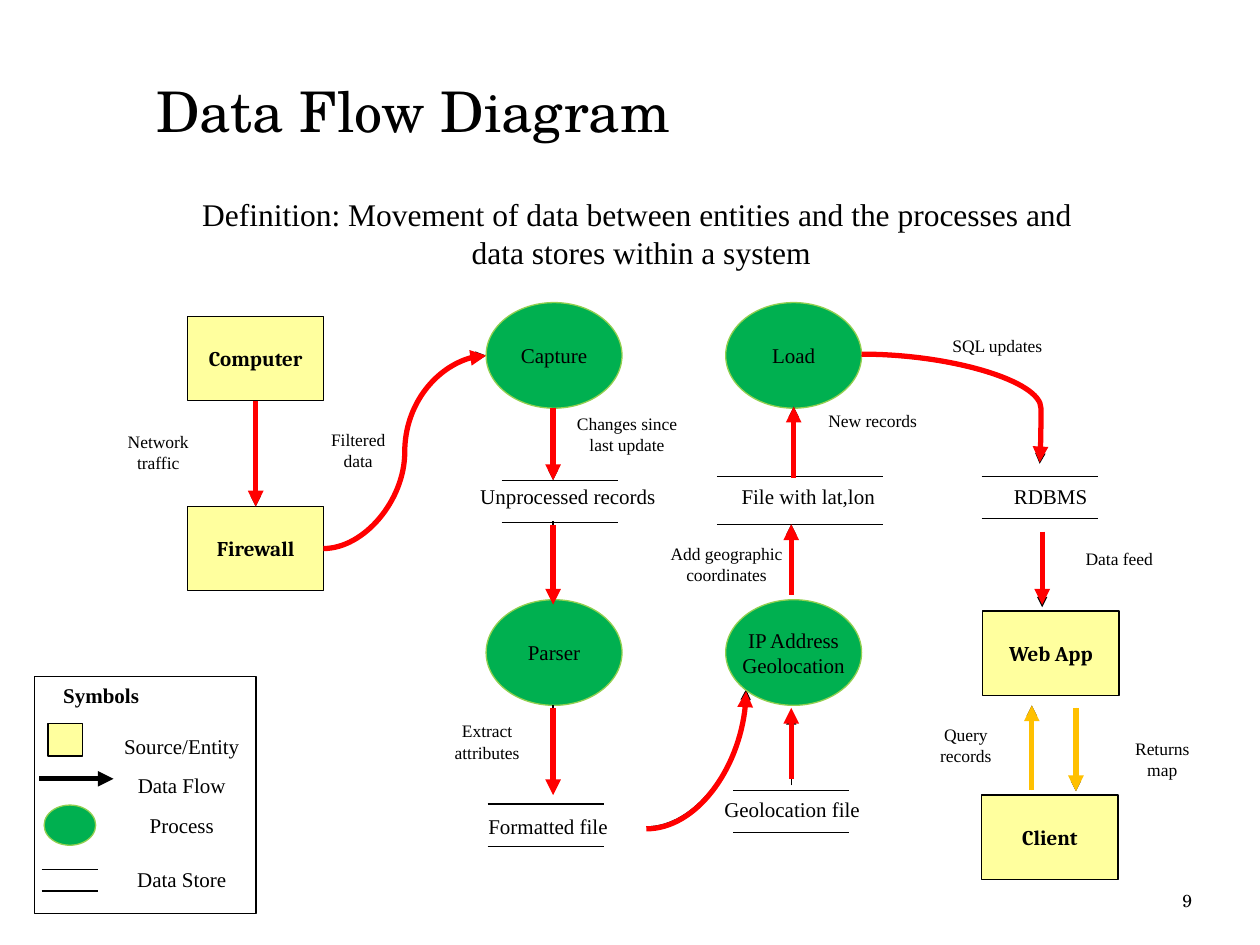
from lxml import etree
from pptx import Presentation
from pptx.dml.color import RGBColor
from pptx.enum.shapes import MSO_CONNECTOR as CONN, MSO_SHAPE as SHAPE
from pptx.enum.text import MSO_ANCHOR as ANCHOR, PP_ALIGN as ALIGN
from pptx.oxml.ns import qn
from pptx.util import Cm, Pt

COLORS = {
    "text": "000000", "line": "000000", "entity": "FFFF9E", "process": "00B050",
    "rim": "92D050", "flow": "FF0000", "query": "FFC000",
}
TIMES, SERIF, HEADING = "Times New Roman", "Cambria", "TeX Gyre Schola"
ENTITY_W, ENTITY_H = 2.75, 1.7
PROCESS_W, PROCESS_H = 2.74, 2.13


def rgb(name):
    return RGBColor.from_string(COLORS[name])


# Basic parts
def set_text(sp, text, size, font=TIMES, bold=False, align=ALIGN.CENTER,
             anchor=ANCHOR.TOP, wrap=True):
    tf = sp.text_frame
    tf.text = text
    tf.word_wrap = wrap
    tf.vertical_anchor = anchor
    for p in tf.paragraphs:
        p.alignment = align
        p.font.size = Pt(size)
        p.font.name = font
        p.font.bold = bold
        p.font.color.rgb = rgb("text")


def add_label(shapes, x, y, w, h, text, size=10, **style):
    sp = shapes.add_textbox(Cm(x), Cm(y), Cm(w), Cm(h))
    set_text(sp, text, size, **style)


def add_box(shapes, kind, x, y, w, h, fill=None, line="line"):
    sp = shapes.add_shape(kind, Cm(x), Cm(y), Cm(w), Cm(h))
    sp.shadow.inherit = False
    if fill:
        sp.fill.solid()
        sp.fill.fore_color.rgb = rgb(fill)
    else:
        sp.fill.background()
    sp.line.color.rgb = rgb(line)
    sp.line.width = Pt(0.75)
    return sp


def add_entity(shapes, x, y, text):
    sp = add_box(shapes, SHAPE.RECTANGLE, x, y, ENTITY_W, ENTITY_H, "entity")
    set_text(sp, text, 12, SERIF, True, anchor=ANCHOR.MIDDLE, wrap=False)
    return sp


def add_process(shapes, x, y, text):
    sp = add_box(shapes, SHAPE.OVAL, x, y, PROCESS_W, PROCESS_H, "process", "rim")
    set_text(sp, text, 12, anchor=ANCHOR.MIDDLE, wrap=False)


def add_line(shapes, x1, y1, x2, y2, color="line", width=0.75, arrow=False,
             curve=None, adj=None):
    kind = CONN.CURVE if curve else CONN.STRAIGHT
    c = shapes.add_connector(kind, Cm(x1), Cm(y1), Cm(x2), Cm(y2))
    c.line.color.rgb = rgb(color)
    c.line.width = Pt(width)
    spPr = c._element.spPr
    if arrow:
        etree.SubElement(spPr.find(qn("a:ln")), qn("a:tailEnd"), type="triangle")
    etree.SubElement(spPr, qn("a:effectLst"))
    if curve:
        geom = spPr.find(qn("a:prstGeom"))
        geom.set("prst", curve)
        if adj:
            guides = geom.get_or_add_avLst()
            etree.SubElement(guides, qn("a:gd"), name="adj1", fmla=f"val {adj}")
    return c


def add_flow(shapes, x1, y1, x2, y2, color="flow", shift=0, **curve):
    """A thick arrow over a thin black one, which is moved down by shift."""
    under = add_line(shapes, x1, y1 + shift, x2, y2 + shift, arrow=True, **curve)
    over = add_line(shapes, x1, y1, x2, y2, color, 3, True, **curve)
    return under, over


def add_rails(shapes, x, y, w, gap):
    for rail_y in (y, y + gap):
        add_line(shapes, x, rail_y, x + w, rail_y)


def add_store(shapes, x, y, text, text_x, text_y, text_w, w=2.34, gap=0.85):
    """Two rails and a name, the name placed relative to the upper rail."""
    group = shapes.add_group_shape().shapes
    add_rails(group, x, y, w, gap)
    add_label(group, x + text_x, y + text_y, text_w, 0.76, text, 12)


# Regions
def draw_network(shapes, x, y):
    computer = add_entity(shapes, x + 1.72, y, "Computer")
    firewall = add_entity(shapes, x + 1.72, y + 3.83, "Firewall")
    mid = x + 1.72 + ENTITY_W / 2
    for c in add_flow(shapes, mid, y + ENTITY_H, mid, y + 3.83):
        c.begin_connect(computer, 2)
        c.end_connect(firewall, 0)
    add_flow(shapes, x + 4.46, y + 4.68, x + 7.74, y + 0.79,
             curve="curvedConnector3", adj=50000)
    add_label(shapes, x, y + 2.18, 2.26, 1.12, "Network traffic")
    add_label(shapes, x + 3.71, y + 2.15, 2.9, 1.12, "Filtered\ndata")


def draw_capture(shapes, x, y):
    add_process(shapes, x + 1.34, y, "Capture")
    add_process(shapes, x + 1.34, y + 5.99, "Parser")
    add_store(shapes, x + 1.65, y + 3.58, "Unprocessed records", -0.92, -0.05, 4.52)
    add_store(shapes, x + 1.37, y + 10.11, "Formatted file", -0.76, 0.07, 3.96)
    for top, bottom, shift in ((2.13, 3.58, 0), (4.49, 6.09, -0.08), (8.17, 9.93, -0.05)):
        add_flow(shapes, x + 2.69, y + top, x + 2.69, y + bottom, shift=shift)
    add_flow(shapes, x + 4.57, y + 10.61, x + 6.58, y + 7.84, shift=-0.04,
             curve="curvedConnector2")
    add_label(shapes, x + 2.82, y + 2.1, 2.72, 1.12, "Changes since last update")
    add_label(shapes, x, y + 8.3, 2.72, 1.12, "Extract\vattributes")


def draw_load(shapes, x, y):
    add_process(shapes, x + 1.47, y, "Load")
    add_process(shapes, x + 1.47, y + 5.99, "IP Address\vGeolocation")
    add_store(shapes, x + 1.29, y + 3.5, "File with lat,lon", -0.3, 0.03, 4.29, 3.35, 0.97)
    add_store(shapes, x + 1.62, y + 9.83, "Geolocation file", -0.51, 0, 3.4)
    for dx, bottom, top, shift in ((2.84, 3.53, 2.1, 0), (2.79, 5.89, 4.47, 0),
                                   (2.79, 9.6, 8.17, 0.13)):
        add_flow(shapes, x + dx, y + bottom, x + dx, y + top, shift=shift)
    add_flow(shapes, x + 4.21, y + 1.04, x + 7.8, y + 3.22, shift=0.03,
             curve="curvedConnector3", adj=100700)
    add_label(shapes, x + 3.07, y + 2.05, 2.72, 0.69, "New records")
    add_label(shapes, x, y + 4.72, 2.97, 1.12, "Add geographic\ncoordinates")
    add_label(shapes, x + 5.46, y + 0.53, 2.97, 0.69, "SQL updates")


def draw_web(shapes, x, y):
    add_store(shapes, x + 1.68, y, "RDBMS", -0.31, 0.03, 3.4)
    add_entity(shapes, x + 1.7, y + 2.72, "Web App")
    add_entity(shapes, x + 1.68, y + 6.43, "Client")
    add_flow(shapes, x + 2.9, y + 1.12, x + 2.9, y + 2.59, shift=0.05)
    add_flow(shapes, x + 2.69, y + 6.33, x + 2.69, y + 4.62, "query")
    add_flow(shapes, x + 3.58, y + 4.67, x + 3.58, y + 6.35, "query")
    add_label(shapes, x + 2.97, y + 1.32, 2.97, 0.69, "Data feed")
    add_label(shapes, x, y + 4.88, 2.72, 1.12, "Query\nrecords")
    add_label(shapes, x + 3.96, y + 5.16, 2.72, 1.12, "Returns\nmap")


def draw_legend(shapes, x, y, w, h):
    add_box(shapes, SHAPE.RECTANGLE, x, y, w, h)
    add_label(shapes, x + 0.17, y, 2.36, 0.76, "Symbols", 12, bold=True)
    add_box(shapes, SHAPE.RECTANGLE, x + 0.28, y + 0.94, 0.69, 0.66, "entity")
    add_line(shapes, x + 0.1, y + 2.06, x + 1.6, y + 2.06, width=3, arrow=True)
    add_box(shapes, SHAPE.OVAL, x + 0.2, y + 2.59, 1.04, 0.81, "process", "rim")
    add_rails(shapes.add_group_shape().shapes, x + 0.15, y + 3.89, 1.14, 0.43)
    for dy, name in ((1.02, "Source/Entity"), (1.8, "Data Flow"),
                     (2.62, "Process"), (3.71, "Data Store")):
        add_label(shapes, x + 1.49, y + dy, 2.97, 0.76, name, 12, anchor=ANCHOR.MIDDLE)


def main():
    prs = Presentation()
    prs.slide_width, prs.slide_height = Cm(25.4), Cm(19.05)
    shapes = prs.slides.add_slide(prs.slide_layouts[6]).shapes

    # Title, definition and page number
    add_label(shapes, 2.9, 0.64, 21.41, 2.39, "Data Flow Diagram", 32,
              font=HEADING, align=ALIGN.LEFT, anchor=ANCHOR.BOTTOM)
    add_label(shapes, 1.32, 3.81, 23.22, 1.8,
              "Definition: Movement of data between entities and the processes and \v"
              "data stores within a system", 18)
    add_label(shapes, 19, 17.53, 5.28, 0.97, "9", font=HEADING,
              align=ALIGN.RIGHT, anchor=ANCHOR.BOTTOM)

    # Diagram
    draw_network(shapes, 2.06, 6.38)
    draw_capture(shapes, 8.46, 6.1)
    draw_load(shapes, 13.16, 6.1)
    draw_web(shapes, 18.11, 9.6)
    draw_legend(shapes, 0.69, 13.64, 4.47, 4.78)
    prs.save("out.pptx")


if __name__ == "__main__":
    main()
